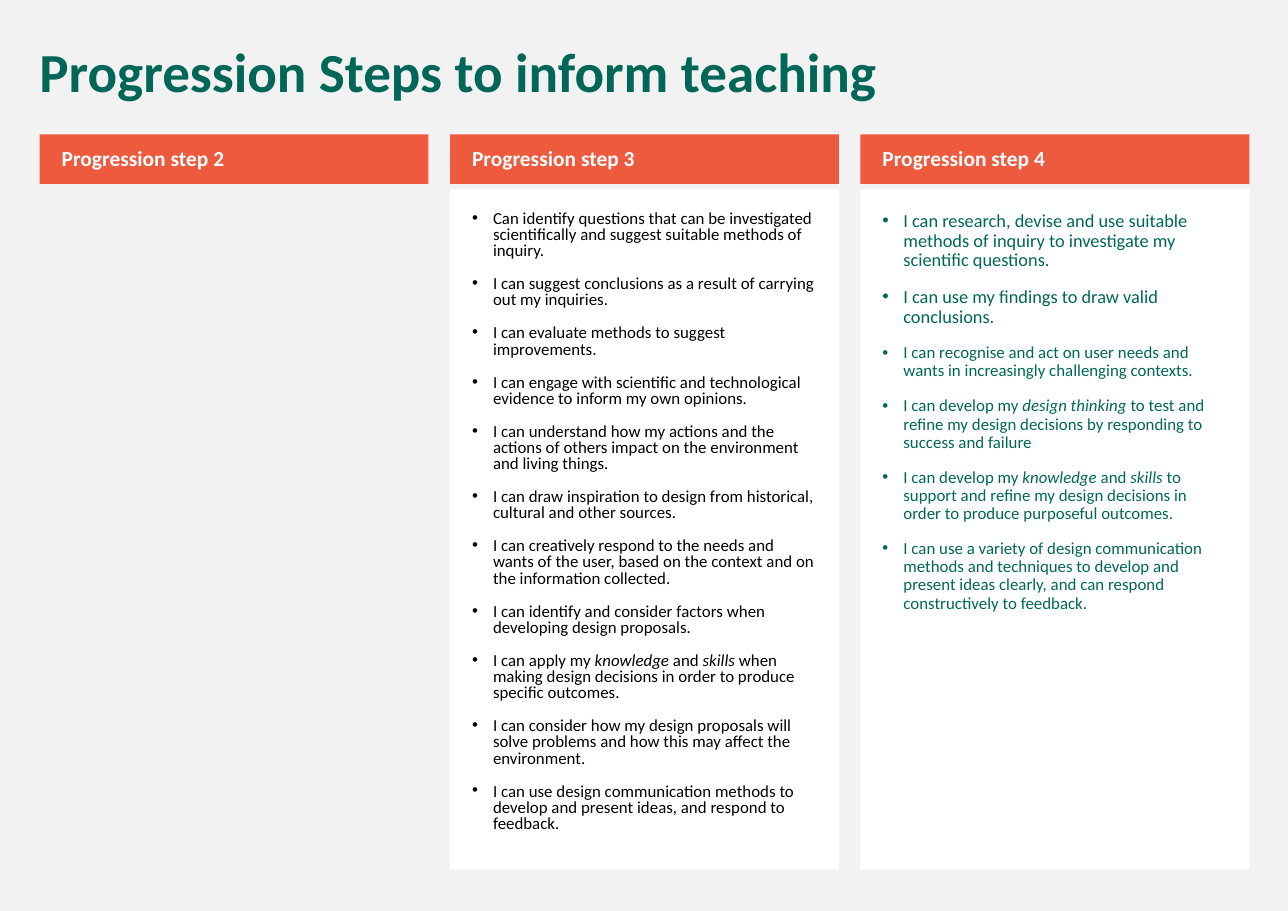
from dataclasses import dataclass

from lxml import etree
from pptx import Presentation
from pptx.dml.color import RGBColor
from pptx.enum.shapes import MSO_SHAPE
from pptx.enum.text import MSO_ANCHOR, PP_ALIGN
from pptx.oxml.ns import qn
from pptx.util import Inches, Pt

RECTANGLE = MSO_SHAPE.RECTANGLE
TOP, MIDDLE = MSO_ANCHOR.TOP, MSO_ANCHOR.MIDDLE
LEFT = PP_ALIGN.LEFT


@dataclass(frozen=True)
class Theme:
    font: str = "Calibri"
    background: str = "F2F2F2"
    banner: str = "ED5A3E"
    panel: str = "FFFFFF"
    light: str = "FFFFFF"
    dark: str = "000000"
    accent: str = "006758"
    title_size: int = 36
    heading_size: int = 14
    large_size: int = 12
    body_size: int = 11
    space_before: int = 11
    bullet_indent: float = 0.19


@dataclass(frozen=True)
class Grid:
    left: float = 0.36
    right: float = 11.34
    width: float = 3.53
    columns: int = 3
    title_top: float = 0.36
    title_height: float = 0.65
    banner_top: float = 1.22
    banner_height: float = 0.45
    panel_top: float = 1.72
    panel_height: float = 6.17

    def column(self, index):
        pitch = (self.right - self.left - self.width) / (self.columns - 1)
        return self.left + index * pitch


class ProgressionSlide:
    def __init__(self, slide, theme, grid):
        self.slide, self.theme, self.grid = slide, theme, grid
        fill = slide.background.fill
        fill.solid()
        fill.fore_color.rgb = RGBColor.from_string(theme.background)

    def frame(self, shape, insets, anchor):
        frame = shape.text_frame
        frame.word_wrap = True
        frame.vertical_anchor = anchor
        frame.margin_left, frame.margin_top, frame.margin_right, frame.margin_bottom = map(Inches, insets)
        return frame

    def block(self, column, top, height, colour, insets, anchor):
        grid = self.grid
        box = self.slide.shapes.add_shape(
            RECTANGLE, Inches(grid.column(column)), Inches(top), Inches(grid.width), Inches(height))
        box.shadow.inherit = False
        box.fill.solid()
        box.fill.fore_color.rgb = RGBColor.from_string(colour)
        box.line.fill.background()
        return self.frame(box, insets, anchor)

    def set_text(self, paragraph, text, size, colour, bold=False, spacing=0.9):
        paragraph.alignment = LEFT
        paragraph.line_spacing = spacing
        paragraph.space_before = Pt(self.theme.space_before)
        font = paragraph.font
        font.name, font.size, font.bold = self.theme.font, Pt(size), bold
        font.color.rgb = RGBColor.from_string(colour)
        for position, part in enumerate(text.split("*")):
            run = paragraph.add_run()
            run.text = part
            if position % 2:
                run.font.italic = True

    def bullet(self, paragraph):
        indent = Inches(self.theme.bullet_indent)
        properties = paragraph._p.get_or_add_pPr()
        properties.set("marL", str(indent))
        properties.set("indent", str(-indent))
        typeface = etree.Element(qn("a:buFont"), typeface="Arial")
        mark = etree.Element(qn("a:buChar"), char="•")
        defaults = properties.find(qn("a:defRPr"))
        defaults.addprevious(typeface)
        defaults.addprevious(mark)

    def title(self, text):
        grid, theme = self.grid, self.theme
        inset = 0.1
        box = self.slide.shapes.add_textbox(
            Inches(grid.left - inset), Inches(grid.title_top),
            Inches(grid.right - grid.left + inset), Inches(grid.title_height))
        frame = self.frame(box, (inset, 0.05, inset, 0.05), TOP)
        self.set_text(frame.paragraphs[0], text, theme.title_size, theme.accent, bold=True)

    def heading(self, column, text):
        grid, theme = self.grid, self.theme
        frame = self.block(column, grid.banner_top, grid.banner_height, theme.banner,
                           (0.2, 0.05, 0.1, 0.05), MIDDLE)
        self.set_text(frame.paragraphs[0], text, theme.heading_size, theme.light, bold=True)

    def statements(self, column, items, colour, spacing, large_count=0):
        grid, theme = self.grid, self.theme
        frame = self.block(column, grid.panel_top, grid.panel_height, theme.panel, (0.2,) * 4, TOP)
        for index, statement in enumerate(items):
            paragraph = frame.add_paragraph() if index else frame.paragraphs[0]
            size = theme.large_size if index < large_count else theme.body_size
            self.set_text(paragraph, statement, size, colour, spacing=spacing)
            self.bullet(paragraph)


STEP_3 = [
    "Can identify questions that can be investigated scientifically and suggest suitable methods of inquiry.",
    "I can suggest conclusions as a result of carrying out my inquiries.",
    "I can evaluate methods to suggest improvements.",
    "I can engage with scientific and technological evidence to inform my own opinions.",
    "I can understand how my actions and the actions of others impact on the environment and living things.",
    "I can draw inspiration to design from historical, cultural and other sources.",
    "I can creatively respond to the needs and wants of the user, based on the context "
    "and on the information collected.",
    "I can identify and consider factors when developing design proposals.",
    "I can apply my *knowledge* and *skills* when making design decisions in order to produce specific outcomes.",
    "I can consider how my design proposals will solve problems and how this may affect the environment.",
    "I can use design communication methods to develop and present ideas, and respond to feedback.",
]
STEP_4 = [
    "I can research, devise and use suitable methods of inquiry to investigate my scientific questions.",
    "I can use my findings to draw valid conclusions.",
    "I can recognise and act on user needs and wants in increasingly challenging contexts.",
    "I can develop my *design thinking* to test and refine my design decisions by responding to success and failure",
    "I can develop my *knowledge* and *skills* to support and refine my design decisions "
    "in order to produce purposeful outcomes.",
    "I can use a variety of design communication methods and techniques to develop and present ideas clearly, "
    "and can respond constructively to feedback.",
]


def main():
    deck = Presentation()
    deck.slide_width, deck.slide_height = Inches(11.69), Inches(8.27)
    theme, grid = Theme(), Grid()
    page = ProgressionSlide(deck.slides.add_slide(deck.slide_layouts[6]), theme, grid)
    page.title("Progression Steps to inform teaching")
    for column in range(grid.columns):
        page.heading(column, f"Progression step {column + 2}")
    page.statements(1, STEP_3, theme.dark, spacing=0.8)
    page.statements(2, STEP_4, theme.accent, spacing=0.9, large_count=2)
    deck.save("out.pptx")


if __name__ == "__main__":
    main()
